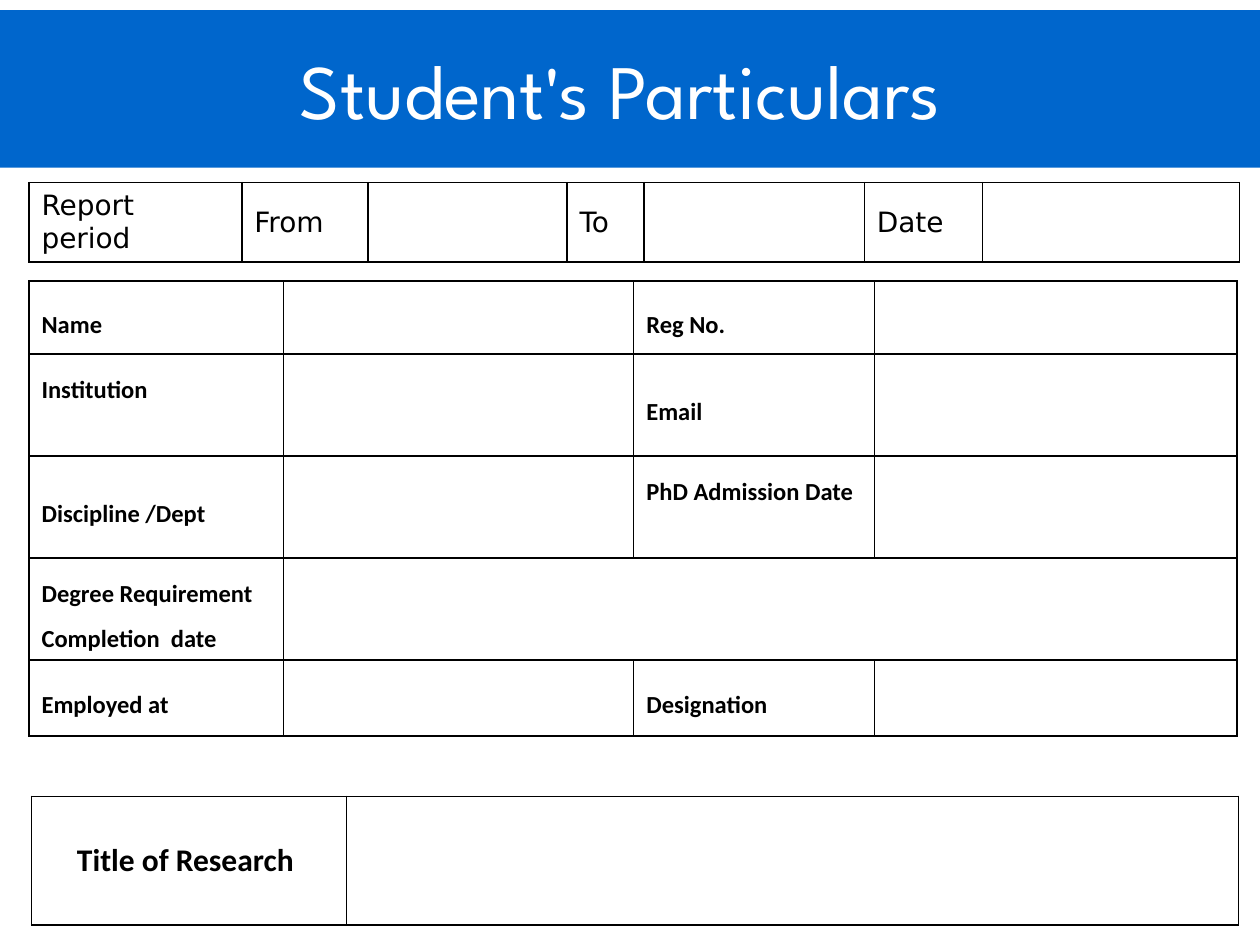
from pptx import Presentation
from pptx.dml.color import RGBColor
from pptx.enum.text import MSO_ANCHOR, PP_ALIGN
from pptx.oxml import parse_xml
from pptx.oxml.ns import nsdecls
from pptx.util import Inches, Pt

BLUE = RGBColor(0x00, 0x66, 0xCC)
WHITE = RGBColor(0xFF, 0xFF, 0xFF)
BLACK = RGBColor(0x00, 0x00, 0x00)

TITLE = "Student's Particulars "
PERIOD = [["Report\nperiod", "From", "", "To", "", "Date", ""]]
DETAILS = [
    ["Name", "", "Reg No.", ""],
    ["Institution", "", "Email", ""],
    ["Discipline /Dept", "", "PhD Admission Date", ""],
    ["Degree Requirement Completion  date", "", "", ""],
    ["Employed at", "", "Designation", ""],
]
TOPIC = [["Title of Research ", ""]]
HIGH = ("Institution", "PhD Admission Date")  # labels set at the cell top


def style(par, font, size, color, bold=False):
    for run in par.runs:
        run.font.name = font
        run.font.size = Pt(size)
        run.font.bold = bold
        run.font.color.rgb = color


def border(cell):
    props = cell._tc.get_or_add_tcPr()
    for side in "LRTB":
        props.append(parse_xml(
            f'<a:ln{side} {nsdecls("a")} w="{Pt(1)}"><a:solidFill>'
            f'<a:srgbClr val="{BLACK}"/></a:solidFill></a:ln{side}>'))


def add_grid(slide, rows, left, top, widths, heights, font, size,
             bold=False, align=PP_ALIGN.LEFT, space=1.0):
    """Add a bordered white table whose cells share one text style."""
    table = slide.shapes.add_table(
        len(rows), len(widths), Inches(left), Inches(top),
        Inches(sum(widths)), Inches(sum(heights))).table
    table.first_row = table.horz_banding = False
    for col, width in zip(table.columns, widths):
        col.width = Inches(width)
    for row, height, labels in zip(table.rows, heights, rows):
        row.height = Inches(height)
        for cell, label in zip(row.cells, labels):
            border(cell)
            cell.fill.solid()
            cell.fill.fore_color.rgb = WHITE
            cell.vertical_anchor = (
                MSO_ANCHOR.TOP if label in HIGH else MSO_ANCHOR.MIDDLE)
            if not label:
                continue
            cell.text_frame.text = label
            for par in cell.text_frame.paragraphs:
                par.alignment = align
                par.line_spacing = space
                style(par, font, size, BLACK, bold)
    return table


def main():
    deck = Presentation()
    deck.slide_width, deck.slide_height = Inches(10), Inches(7.5)
    slide = deck.slides.add_slide(deck.slide_layouts[5])

    title = slide.shapes.title
    title.left, title.top = Inches(0), Inches(0.08)
    title.width, title.height = Inches(10), Inches(1.25)
    title.fill.solid()
    title.fill.fore_color.rgb = BLUE
    title.text_frame.text = TITLE
    title.text_frame.vertical_anchor = MSO_ANCHOR.MIDDLE
    head = title.text_frame.paragraphs[0]
    head.alignment = PP_ALIGN.CENTER
    style(head, "League Spartan", 44, WHITE)

    details = add_grid(
        slide, DETAILS, 0.23, 2.23, [2.02, 2.78, 1.91, 2.88],
        [0.58, 0.81, 0.81, 0.81, 0.6], "Calibri", 14, bold=True, space=1.5)
    details.cell(3, 1).merge(details.cell(3, 3))
    add_grid(slide, PERIOD, 0.23, 1.45,
             [1.69, 1, 1.58, 0.61, 1.75, 0.94, 2.04], [0.63],
             "DejaVu Sans", 16)
    add_grid(slide, TOPIC, 0.25, 6.32, [2.5, 7.08], [1.02],
             "Calibri", 18, bold=True, align=PP_ALIGN.CENTER)

    deck.save("out.pptx")


if __name__ == "__main__":
    main()
